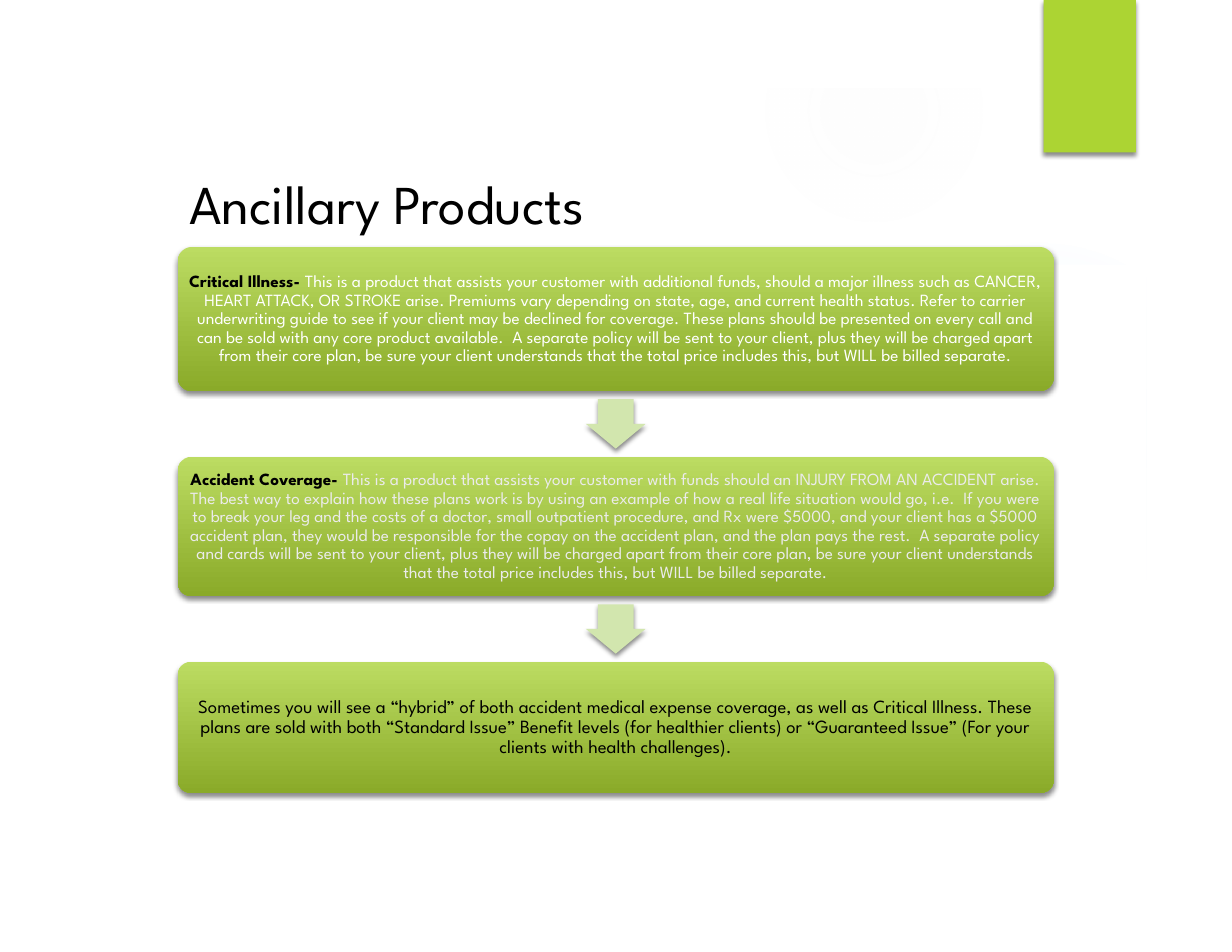
import pptx
import pptx.util
import pptx.dml.color
import pptx.enum.shapes
import pptx.enum.text
import lxml.etree

Cm = pptx.util.Cm
Pt = pptx.util.Pt
SHAPES = pptx.enum.shapes.MSO_SHAPE
ANCHOR = pptx.enum.text.MSO_ANCHOR
ALIGN = pptx.enum.text.PP_ALIGN

COLORS = {
    "tab": "ACD433",
    "box top": "BCDC62",
    "box bottom": "8AAA29",
    "arrow": "D2E6AE",
    "ink": "000000",
    "white": "FFFFFF",
    "pale": "EBEBEB",
    "blue glow": "75CEEC",
    "grey glow": "F7F7F7",
}
FONT = "League Spartan"
HEADING = "Ancillary Products"
PRODUCTS = [
    {
        "height": 3.27,
        "size": 11,
        "runs": [
            ("Critical Illness- ", "ink", True),
            ("This is a product that assists your customer with additional funds, should a major "
             "illness such as CANCER, HEART ATTACK, OR STROKE arise. Premiums vary depending on "
             "state, age, and current health status. Refer to carrier underwriting guide to see if "
             "your client may be declined for coverage. These plans should be presented on every "
             "call and can be sold with any core product available.  A separate policy will be sent "
             "to your client, plus they will be charged apart from their core plan, be sure your "
             "client understands that the total price includes this, but WILL be billed separate.",
             "white", False),
        ],
    },
    {
        "height": 3.16,
        "size": 11,
        "runs": [
            ("Accident Coverage- ", "ink", True),
            ("This is a product that assists your customer with funds should an INJURY FROM AN "
             "ACCIDENT arise. The best way to explain how these plans work is by using an example "
             "of how a real life situation would go, i.e.  If you were to break your leg and the "
             "costs of a doctor, small outpatient procedure, and Rx were $5000, and your client has "
             "a $5000 accident plan, they would be responsible for the copay on the accident plan, "
             "and the plan pays the rest.  A separate policy and cards will be sent to your client, "
             "plus they will be charged apart from their core plan, be sure your client understands "
             "that the total price includes this, but WILL be billed separate.",
             "pale", False),
        ],
    },
    {
        "height": 2.97,
        "size": 12,
        "runs": [
            ("Sometimes you will see a “hybrid” of both accident medical expense coverage, as well "
             "as Critical Illness. These plans are sold with both “Standard Issue” Benefit levels "
             "(for healthier clients) or “Guaranteed Issue” (For your clients with health "
             "challenges).", "ink", False),
        ],
    },
]
GLOWS = [
    ((19.25, 5.28, 8.61, 8.86), "blue glow", [(0, 7), (36, 6), (69, 0)]),
    ((17.37, 0, 4.9, 5.03), "grey glow", [(0, 14), (36, 7), (73, 0)]),
]
SHEEN = [[(19.53, 6.73), (22.5, 6.6), (26.7, 6.02), (26.57, 5.03), (25.15, 5.46), (23.52, 5.89),
          (21.72, 6.27), (20.24, 6.5), (19.46, 6.58)]]
PANEL = [[(1.47, 5.84), (1.47, 20.12), (26.47, 20.12), (26.47, 5.84), (24.18, 6.17),
          (21.92, 6.43), (19.69, 6.6), (17.48, 6.71), (15.32, 6.76), (13.26, 6.76),
          (11.3, 6.71), (9.45, 6.6), (7.75, 6.5), (6.2, 6.38), (3.68, 6.12)]]
BORDER = [[(0, 0), (0, 21.59), (27.94, 21.59), (27.94, 0)],
          [(26.42, 20.02), (26.42, 1.63), (1.57, 1.63), (1.57, 20.02)]]
BACKDROP = [(SHEEN, 20), (PANEL, 100), (BORDER, 100)]

BOX_LEFT, BOX_TOP, BOX_WIDTH, GAP = 4.03, 5.6, 19.87, 1.49
ARROW_WIDTH, ARROW_HEIGHT = 1.35, 1.12
BOX_FRAME = {
    "word_wrap": True,
    "vertical_anchor": ANCHOR.MIDDLE,
    "margin_left": Cm(0.12),
    "margin_right": Cm(0.12),
    "margin_top": Cm(0.12),
    "margin_bottom": Cm(0.12),
}
NS = 'xmlns:a="http://schemas.openxmlformats.org/drawingml/2006/main"'
SHADOW = f"""<a:outerShdw {NS} blurRad="38100" dist="25400" dir="5400000" rotWithShape="0">
<a:srgbClr val="000000"><a:alpha val="45000"/></a:srgbClr></a:outerShdw>"""
RADIAL = """<a:path {ns} path="circle">
<a:fillToRect l="50000" t="50000" r="50000" b="50000"/></a:path>"""


def rgb(name):
    return pptx.dml.color.RGBColor.from_string(COLORS[name])


def apply(target, values):
    for key, value in values.items():
        setattr(target, key, value)


def add_run(paragraph, text, size, color, bold=False):
    run = paragraph.add_run()
    run.text = text
    apply(run.font, {"name": FONT, "size": Pt(size), "bold": bold})
    run.font.color.rgb = rgb(color)


def add_glow(slide, place, color, stops):
    glow = slide.shapes.add_shape(SHAPES.OVAL, *map(Cm, place))
    glow.shadow.inherit = False
    glow.line.fill.background()
    glow.fill.gradient()
    gradient = glow.element.spPr.find(pptx.oxml.ns.qn("a:gradFill"))
    for child in list(gradient):
        gradient.remove(child)
    stop_list = "".join(
        f'<a:gs pos="{position * 1000}"><a:srgbClr val="{COLORS[color]}">'
        f'<a:alpha val="{alpha * 1000}"/></a:srgbClr></a:gs>' for position, alpha in stops)
    gradient.append(lxml.etree.fromstring(f"<a:gsLst {NS}>{stop_list}</a:gsLst>"))
    gradient.append(lxml.etree.fromstring(RADIAL.format(ns=NS)))


def add_white(slide, contours, opacity):
    builder = slide.shapes.build_freeform(*contours[0][0], scale=Cm(1))
    for number, contour in enumerate(contours):
        if number:
            builder.move_to(*contour[0])
        builder.add_line_segments(contour[1:], close=True)
    white = builder.convert_to_shape()
    white.shadow.inherit = False
    white.line.fill.background()
    white.fill.solid()
    white.fill.fore_color.rgb = rgb("white")
    if opacity < 100:
        color = white.element.spPr.find(".//" + pptx.oxml.ns.qn("a:srgbClr"))
        color.append(lxml.etree.fromstring(f'<a:alpha {NS} val="{opacity * 1000}"/>'))


def add_raised(slide, preset, left, top, width, height, colors, adjustments=()):
    raised = slide.shapes.add_shape(preset, Cm(left), Cm(top), Cm(width), Cm(height))
    for index, value in enumerate(adjustments):
        raised.adjustments[index] = value
    if len(colors) == 1:
        raised.fill.solid()
        raised.fill.fore_color.rgb = rgb(colors[0])
    else:
        raised.fill.gradient()
        raised.fill.gradient_angle = 270
        for stop, color in zip(raised.fill.gradient_stops, colors):
            stop.color.rgb = rgb(color)
    raised.line.fill.background()
    raised.shadow.inherit = False
    effects = raised.element.spPr.find(pptx.oxml.ns.qn("a:effectLst"))
    effects.append(lxml.etree.fromstring(SHADOW))
    return raised


def main():
    deck = pptx.Presentation()
    apply(deck, {"slide_width": Cm(27.94), "slide_height": Cm(21.59)})
    slide = deck.slides.add_slide(deck.slide_layouts[6])

    for glow in GLOWS:
        add_glow(slide, *glow)
    for contours, opacity in BACKDROP:
        add_white(slide, contours, opacity)
    add_raised(slide, SHAPES.RECTANGLE, 23.67, 0, 2.09, 3.46, ["tab"])

    heading = slide.shapes.add_textbox(Cm(4.04), Cm(3.38), Cm(19.89), Cm(2.41)).text_frame
    apply(heading, {"word_wrap": True, "vertical_anchor": ANCHOR.MIDDLE})
    add_run(heading.paragraphs[0], HEADING, 35.2, "ink")

    top = BOX_TOP
    for number, product in enumerate(PRODUCTS):
        if number:
            add_raised(slide, SHAPES.DOWN_ARROW, BOX_LEFT + (BOX_WIDTH - ARROW_WIDTH) / 2,
                       top - (GAP + ARROW_HEIGHT) / 2, ARROW_WIDTH, ARROW_HEIGHT,
                       ["arrow"], [0.6, 0.5])
        box = add_raised(slide, SHAPES.ROUNDED_RECTANGLE, BOX_LEFT, top, BOX_WIDTH,
                         product["height"], ["box top", "box bottom"], [0.1])
        apply(box.text_frame, BOX_FRAME)
        paragraph = box.text_frame.paragraphs[0]
        apply(paragraph, {"alignment": ALIGN.CENTER, "line_spacing": 0.9})
        for text, color, bold in product["runs"]:
            add_run(paragraph, text, product["size"], color, bold)
        top += product["height"] + GAP

    deck.save("out.pptx")


if __name__ == "__main__":
    main()
